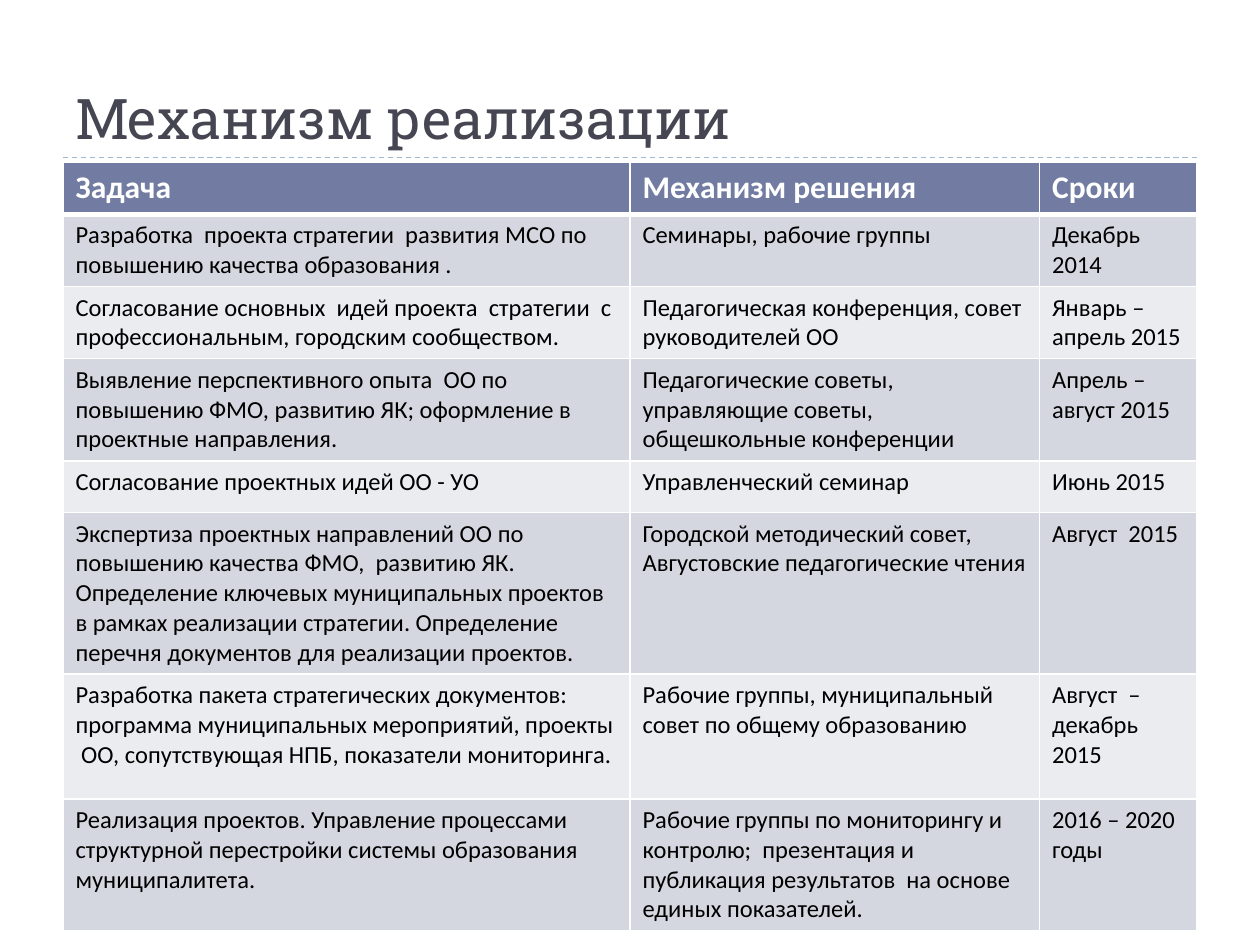
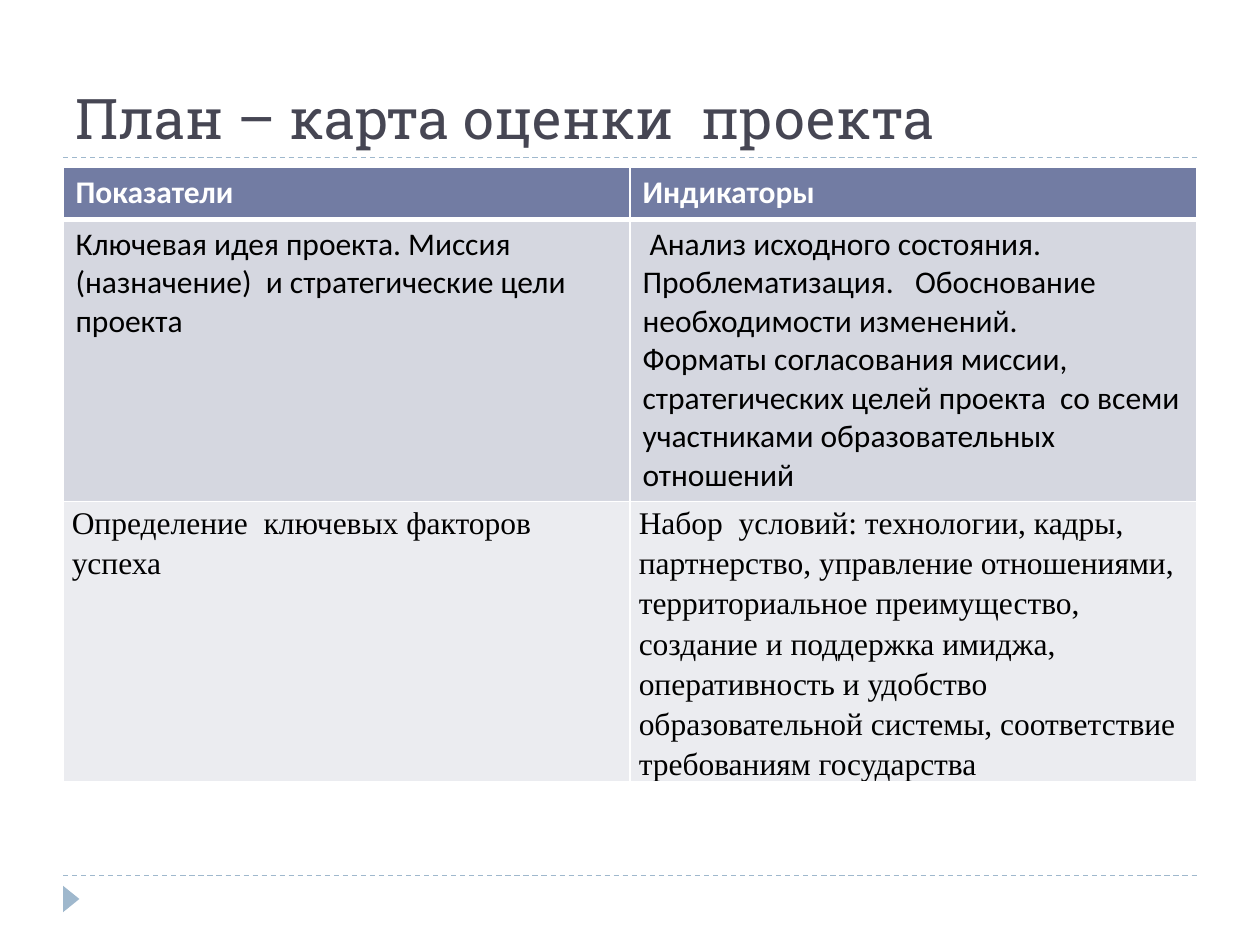
import pptx
import pptx.dml.color
import pptx.enum.dml
import pptx.enum.shapes
import pptx.enum.text
import pptx.oxml
import pptx.oxml.ns
import pptx.util
from pptx.util import Inches

ACCENT, HEADER, TITLE = "9FB8CD", "727CA3", "464653"
WHITE, BLACK = "FFFFFF", "000000"
BANDS = ("D5D7E0", "EBECF0")
LEFT, WIDTH = 0.5, 9

HEADER_FONT = {"name": "Calibri", "size": 18, "bold": True, "color": WHITE}
TASK_FONT = {"name": "Calibri", "size": 14, "bold": False, "color": BLACK}
PLAN_FONT = {**TASK_FONT, "size": 18}
FACTOR_FONT = {**PLAN_FONT, "name": "Times New Roman"}
TITLE_FONT = {"name": "Roboto Slab", "size": 32, "bold": False, "color": TITLE}
TIGHT_CELL = {"margin_left": Inches(0.07), "margin_right": Inches(0.07),
              "margin_top": 0, "margin_bottom": 0}

MECHANISM = [
    ["Задача", "Механизм решения", "Сроки"],
    ["Разработка  проекта стратегии  развития МСО по  повышению качества образования .",
     "Семинары, рабочие группы", "Декабрь 2014"],
    ["Согласование основных  идей проекта  стратегии  с профессиональным, городским сообществом.",
     "Педагогическая конференция, совет руководителей ОО", "Январь –апрель 2015"],
    ["Выявление перспективного опыта  ОО по повышению ФМО, развитию ЯК; оформление в проектные направления.",
     "Педагогические советы, управляющие советы, общешкольные конференции", "Апрель – август 2015"],
    ["Согласование проектных идей ОО - УО", "Управленческий семинар", "Июнь 2015"],
    ["Экспертиза проектных направлений ОО по повышению качества ФМО,  развитию ЯК. "
     "Определение ключевых муниципальных проектов в рамках реализации стратегии. "
     "Определение перечня документов для реализации проектов.",
     "Городской методический совет, Августовские педагогические чтения", "Август  2015"],
    ["Разработка пакета стратегических документов: программа муниципальных мероприятий, "
     "проекты  ОО, сопутствующая НПБ, показатели мониторинга.",
     "Рабочие группы, муниципальный совет по общему образованию", "Август  – декабрь 2015"],
    ["Реализация проектов. Управление процессами структурной перестройки системы образования муниципалитета.",
     "Рабочие группы по мониторингу и контролю;  презентация и публикация результатов  "
     "на основе единых показателей.", "2016 – 2020 годы"],
]
PLAN = [
    ["Показатели", "Индикаторы"],
    ["Ключевая идея проекта. Миссия (назначение)  и стратегические цели проекта",
     " Анализ исходного состояния. Проблематизация.   Обоснование необходимости изменений.\n"
     "Форматы согласования миссии, стратегических целей проекта  со всеми участниками "
     "образовательных отношений"],
    ["Определение  ключевых факторов успеха",
     "Набор  условий: технологии, кадры, партнерство, управление отношениями,  "
     "территориальное преимущество, создание и поддержка имиджа, оперативность и удобство "
     "образовательной системы, соответствие требованиям государства"],
]


def rgb(value):
    """Turn a hex string into a colour."""
    return pptx.dml.color.RGBColor.from_string(value)


def set_all(target, values):
    """Set every attribute named in a dict."""
    for name, value in values.items():
        setattr(target, name, value)


def format_text(tf, font):
    """Give all runs of a text frame one font."""
    for p in tf.paragraphs:
        p.alignment = pptx.enum.text.PP_ALIGN.LEFT
        for r in p.runs:
            set_all(r.font, {"name": font["name"], "bold": font["bold"],
                             "size": pptx.util.Pt(font["size"])})
            r.font.color.rgb = rgb(font["color"])


def add_rule(s, y):
    """Add a dashed line across the slide and return it."""
    line = s.shapes.add_connector(pptx.enum.shapes.MSO_CONNECTOR.STRAIGHT,
                                  Inches(LEFT), Inches(y), Inches(LEFT + WIDTH), Inches(y))
    line.line.color.rgb = rgb(ACCENT)
    line.line.width = pptx.util.Pt(0.75)
    line.line.dash_style = pptx.enum.dml.MSO_LINE.DASH
    line.element.spPr.append(pptx.oxml.parse_xml(
        f'<a:effectLst {pptx.oxml.ns.nsdecls("a")}/>'))
    return line


def add_marker(s):
    """Add the footer triangle pointing right and return it."""
    marker = s.shapes.add_shape(pptx.enum.shapes.MSO_SHAPE.ISOSCELES_TRIANGLE,
                                Inches(0.46), Inches(7.07), Inches(0.21), Inches(0.13))
    marker.rotation = 90
    marker.shadow.inherit = False
    marker.fill.solid()
    marker.fill.fore_color.rgb = rgb(ACCENT)
    marker.line.fill.background()
    return marker


def decorate_layout(s):
    """Move the shared lines and marker into the slide's layout."""
    tree = s.slide_layout.element.cSld.spTree
    for shape in (add_rule(s, 6.95), add_rule(s, 1.25), add_marker(s)):
        tree.append(shape.element)


def add_titled_slide(prs, title):
    """Add a slide with a formatted title."""
    s = prs.slides.add_slide(prs.slide_layouts[5])
    sp = s.shapes.title
    set_all(sp, {"left": Inches(LEFT), "top": Inches(0.17),
                 "width": Inches(WIDTH), "height": Inches(1.08)})
    sp.text_frame.text = title
    sp.text_frame.vertical_anchor = pptx.enum.text.MSO_ANCHOR.BOTTOM
    format_text(sp.text_frame, TITLE_FONT)
    return s


def set_borders(cell, top, bottom):
    """Draw white borders around a cell, widths in points."""
    tc_pr = cell._tc.get_or_add_tcPr()
    for side, width in (("L", 1), ("R", 1), ("T", top), ("B", bottom)):
        tc_pr.append(pptx.oxml.parse_xml(
            f'<a:ln{side} {pptx.oxml.ns.nsdecls("a")} w="{pptx.util.Pt(width)}">'
            f'<a:solidFill><a:srgbClr val="{WHITE}"/></a:solidFill></a:ln{side}>'))


def add_banded_table(s, top, widths, heights, rows, fonts):
    """Add a table with a header row and alternating bands."""
    frame = s.shapes.add_table(len(rows), len(widths), Inches(LEFT), Inches(top),
                               Inches(WIDTH), Inches(sum(heights)))
    table = frame.table
    for column, width in zip(table.columns, widths):
        column.width = Inches(width)
    for i, (texts, height, font) in enumerate(zip(rows, heights, fonts)):
        table.rows[i].height = Inches(height)
        for cell, text in zip(table.rows[i].cells, texts):
            cell.text = text
            format_text(cell.text_frame, font)
            set_borders(cell, 3 if i == 1 else 1, 3 if i == 0 else 1)
            cell.fill.solid()
            cell.fill.fore_color.rgb = rgb(BANDS[(i - 1) % 2] if i else HEADER)
    return table


def main():
    """Build both slides and save the file."""
    prs = pptx.Presentation()
    set_all(prs, {"slide_width": Inches(10), "slide_height": Inches(7.5)})

    s = add_titled_slide(prs, "Механизм реализации")
    decorate_layout(s)
    add_banded_table(s, 1.29, [4.5, 3.25, 1.25],
                     [0.41, 0.57, 0.57, 0.81, 0.41, 1.28, 0.99, 1.04],
                     MECHANISM, [HEADER_FONT] + [TASK_FONT] * 7)

    s = add_titled_slide(prs, "План – карта оценки  проекта")
    table = add_banded_table(s, 1.33, [4.5, 4.5], [0.41, 2.24, 2.22],
                             PLAN, [HEADER_FONT, PLAN_FONT, FACTOR_FONT])
    for cell in table.rows[2].cells:
        set_all(cell, TIGHT_CELL)
        cell.text_frame.paragraphs[0].line_spacing = 1.15

    prs.save("out.pptx")


if __name__ == "__main__":
    main()
